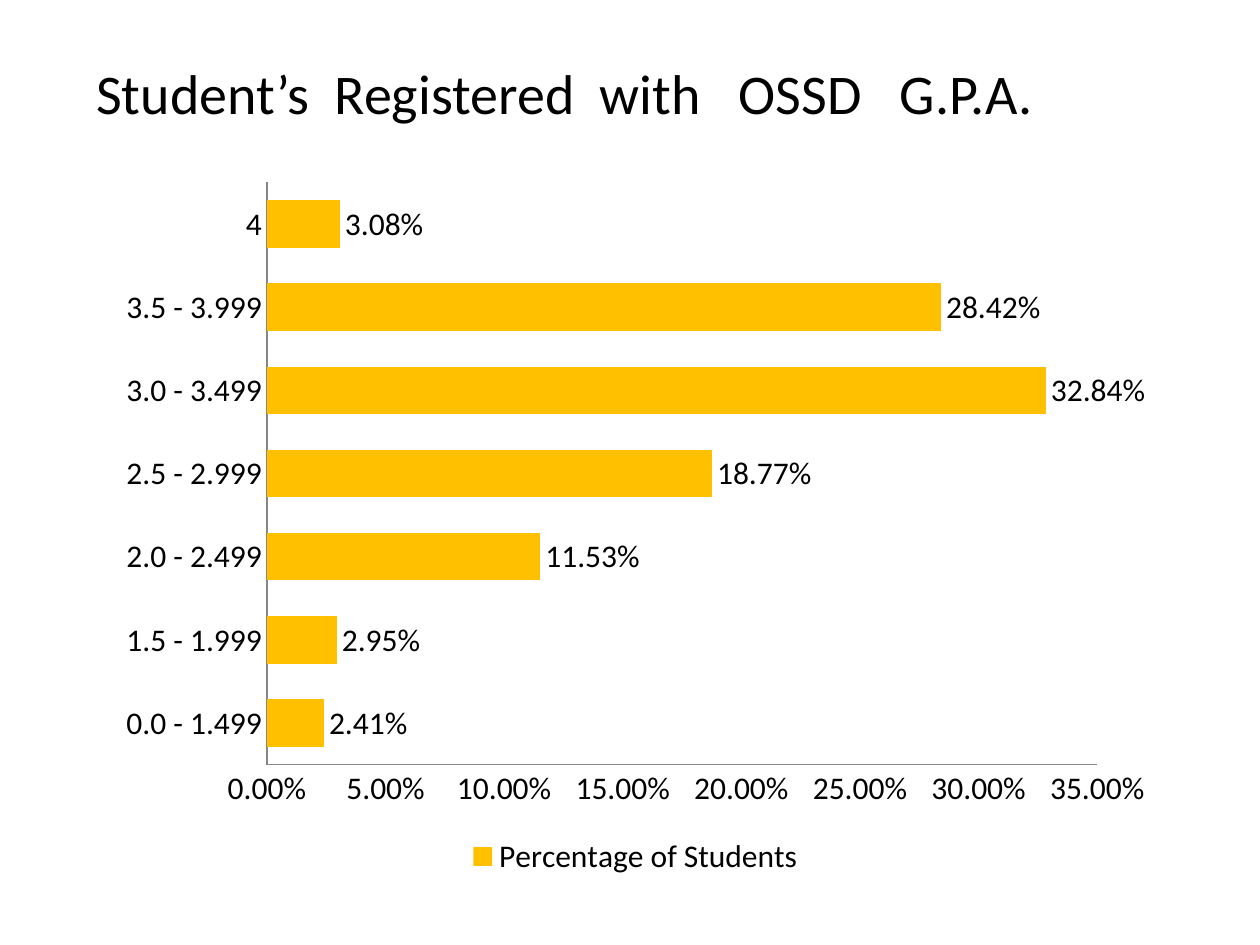
from pptx import Presentation
from pptx.chart.data import CategoryChartData
from pptx.dml.color import RGBColor
from pptx.enum.chart import XL_CHART_TYPE, XL_LABEL_POSITION, XL_LEGEND_POSITION, XL_TICK_MARK
from pptx.enum.text import MSO_AUTO_SIZE
from pptx.util import Cm, Pt

COLORS = {"text": "000000", "bar": "FFC000", "axis": "868686"}
GPA_SHARES = {
    "0.0 - 1.499": 0.0241,
    "1.5 - 1.999": 0.0295,
    "2.0 - 2.499": 0.1153,
    "2.5 - 2.999": 0.1877,
    "3.0 - 3.499": 0.3284,
    "3.5 - 3.999": 0.2842,
    "4": 0.0308,
}


class SlideBuilder:
    font = "Calibri"
    number_format = "0.00%"

    def __init__(self, s):
        self.s = s

    def color(self, name):
        return RGBColor.from_string(COLORS[name])

    def style(self, font, size):
        font.name = self.font
        font.size = Pt(size)
        font.color.rgb = self.color("text")

    def text(self, text, x, y, w, h, size):
        sp = self.s.shapes.add_textbox(Cm(x), Cm(y), Cm(w), Cm(h))
        tf = sp.text_frame
        tf.word_wrap = True
        tf.auto_size = MSO_AUTO_SIZE.SHAPE_TO_FIT_TEXT
        p = tf.paragraphs[0]
        r = p.add_run()
        r.text = text
        self.style(r.font, size)

    def axis(self, axis):
        axis.has_major_gridlines = False
        axis.major_tick_mark = XL_TICK_MARK.NONE
        axis.minor_tick_mark = XL_TICK_MARK.NONE
        axis.format.line.color.rgb = self.color("axis")
        axis.format.line.width = Pt(0.75)

    def bar_chart(self, name, shares, x, y, w, h, size):
        data = CategoryChartData(number_format=self.number_format)
        data.categories = list(shares)
        data.add_series(name, list(shares.values()))
        chart = self.s.shapes.add_chart(
            XL_CHART_TYPE.BAR_CLUSTERED, Cm(x), Cm(y), Cm(w), Cm(h), data
        ).chart
        self.style(chart.font, size)
        chart.has_title = False
        chart.has_legend = True
        chart.legend.position = XL_LEGEND_POSITION.BOTTOM
        chart.legend.include_in_layout = False
        self.axis(chart.category_axis)
        self.axis(chart.value_axis)
        chart.value_axis.minimum_scale = 0
        chart.value_axis.maximum_scale = 0.35
        chart.value_axis.major_unit = 0.05
        chart.value_axis.tick_labels.number_format = self.number_format
        chart.value_axis.tick_labels.number_format_is_linked = False

        plot = chart.plots[0]
        plot.gap_width = 75
        plot.vary_by_categories = False
        series = plot.series[0]
        series.format.fill.solid()
        series.format.fill.fore_color.rgb = self.color("bar")
        labels = series.data_labels
        labels.show_value = True
        labels.number_format = self.number_format
        labels.number_format_is_linked = False
        labels.position = XL_LABEL_POSITION.OUTSIDE_END


def main():
    prs = Presentation()
    prs.slide_width, prs.slide_height = Cm(25.4), Cm(19.05)
    s = prs.slides.add_slide(prs.slide_layouts[6])
    builder = SlideBuilder(s)
    builder.bar_chart("Percentage of Students", GPA_SHARES, 2.12, 3.39, 21.38, 14.39, 18)
    builder.text("Student’s  Registered  with   OSSD   G.P.A.", 1.69, 1.06, 21.17, 1.62, 32)
    prs.save("out.pptx")


if __name__ == "__main__":
    main()
